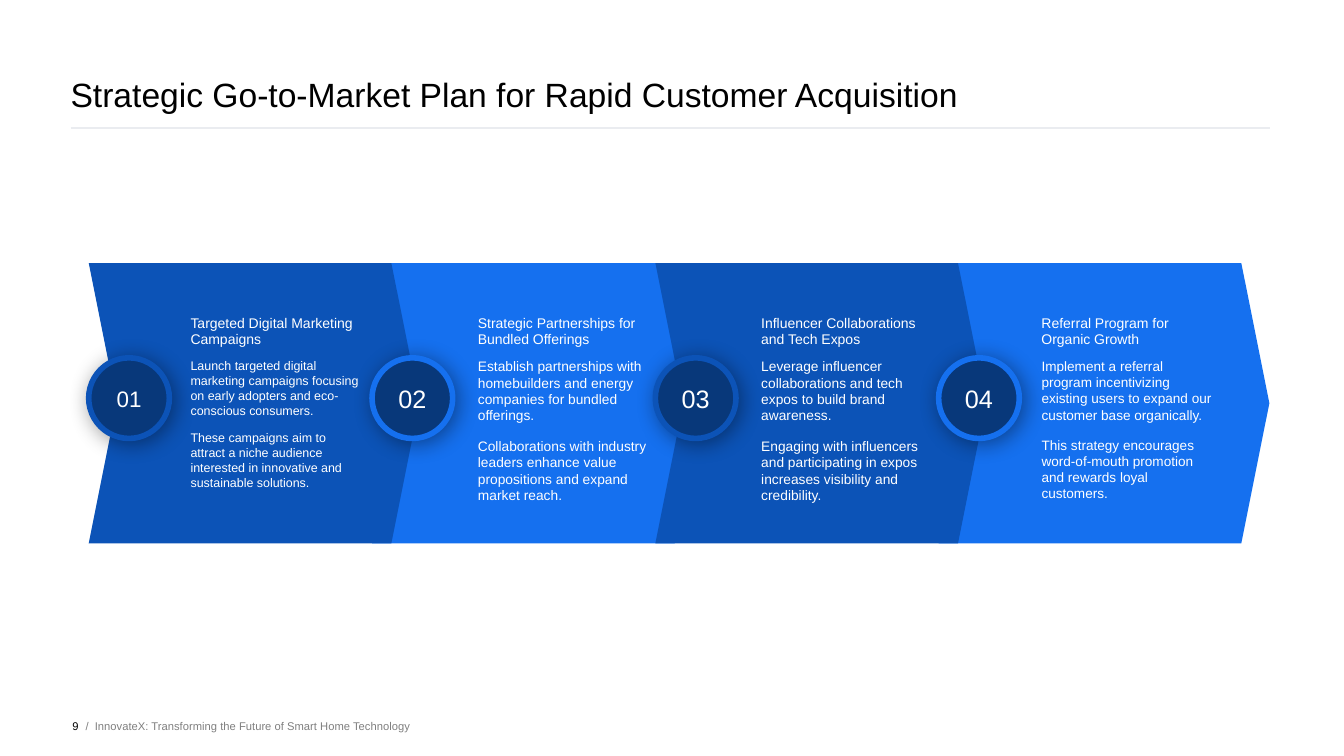
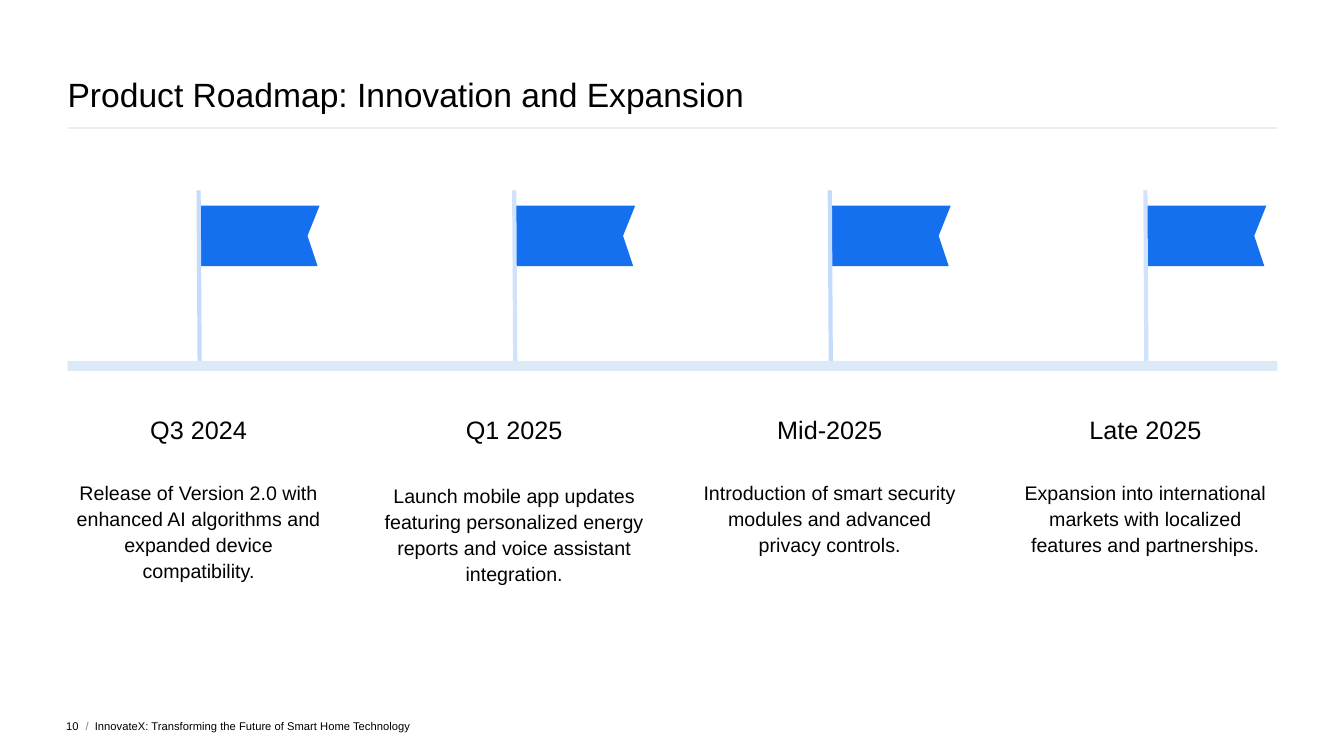
from lxml.etree import SubElement
from pptx import Presentation
from pptx.dml.color import RGBColor
from pptx.enum.shapes import MSO_CONNECTOR, MSO_SHAPE
from pptx.enum.text import MSO_ANCHOR, MSO_AUTO_SIZE, PP_ALIGN
from pptx.oxml.ns import qn
from pptx.util import Inches, Pt

FONT = "Arial"
COLORS = {
    "black": "000000", "white": "FFFFFF", "gray": "808080", "rule": "EAECF0",
    "blue": "1570EF", "deep": "0C53B7", "navy": "08387A",
    "pole": "C5DBFB", "pale_pole": "D0E2FC", "ground": "DCEAF7",
}
FOOTER = "InnovateX: Transforming the Future of Smart Home Technology"

# Heading, text left, text size, number size, paragraphs
STEPS = [
    ("Targeted Digital Marketing Campaigns", 1.89, 8.9, 16, [
        "Launch targeted digital marketing campaigns focusing on early adopters "
        "and eco-conscious consumers.",
        "These campaigns aim to attract a niche audience interested in innovative "
        "and sustainable solutions."]),
    ("Strategic Partnerships for Bundled Offerings", 4.74, 9.8, 18, [
        "Establish partnerships with homebuilders and energy companies for "
        "bundled offerings.",
        "Collaborations with industry leaders enhance value propositions and "
        "expand market reach."]),
    ("Influencer Collaborations and Tech Expos", 7.55, 9.8, 18, [
        "Leverage influencer collaborations and tech expos to build brand awareness.",
        "Engaging with influencers and participating in expos increases visibility "
        "and credibility."]),
    ("Referral Program for Organic Growth", 10.33, 9.7, 18, [
        "Implement a referral program incentivizing existing users to expand our "
        "customer base organically.",
        "This strategy encourages word-of-mouth promotion and rewards loyal "
        "customers."]),
]

# Date, description top, description
MILESTONES = [
    ("Q3 2024", 4.75, "Release of Version 2.0 with enhanced AI algorithms and "
                      "expanded device compatibility."),
    ("Q1 2025", 4.78, "Launch mobile app updates featuring personalized energy "
                      "reports and voice assistant integration."),
    ("Mid-2025", 4.75, "Introduction of smart security modules and advanced "
                       "privacy controls."),
    ("Late 2025", 4.75, "Expansion into international markets with localized "
                        "features and partnerships."),
]


def rgb(name):
    return RGBColor.from_string(COLORS[name])


class Deck:
    """Holds the shared style and the current slide."""

    def __init__(self):
        self.file = Presentation()
        self.file.slide_width = Inches(13.33)
        self.file.slide_height = Inches(7.5)
        self.page = None

    def add_page(self, title, number, left, width, footer_color):
        self.page = self.file.slides.add_slide(self.file.slide_layouts[5])
        # Title and rule
        box = self.page.shapes.title
        box.left, box.top = Inches(left), Inches(0)
        box.width, box.height = Inches(width), Inches(1.13)
        self.fill_text(box, [title], 24, anchor=MSO_ANCHOR.BOTTOM)
        self.line(left, 1.27, left + width, 1.27, "rule", 2)
        # Footer
        middle = MSO_ANCHOR.MIDDLE
        self.text(0.47, 6.9, 0.31, 0.6, [str(number)], 8,
                  align=PP_ALIGN.RIGHT, anchor=middle)
        self.text(0.85, 6.9, 0.09, 0.6, ["/"], 8, "gray", anchor=middle)
        self.text(0.94, 6.9, 8.61, 0.6, [FOOTER], 8, footer_color, anchor=middle)

    def fill_text(self, box, texts, size, color="black", align=PP_ALIGN.LEFT,
                  anchor=MSO_ANCHOR.TOP, spacing=None, after=0):
        frame = box.text_frame
        frame.word_wrap = True
        frame.auto_size = MSO_AUTO_SIZE.NONE
        frame.vertical_anchor = anchor
        frame.margin_left = frame.margin_right = Inches(0)
        frame.margin_top = frame.margin_bottom = Inches(0)
        for index, text in enumerate(texts):
            para = frame.add_paragraph() if index else frame.paragraphs[0]
            para.alignment = align
            para.space_before, para.space_after = Pt(0), Pt(after)
            if spacing:
                para.line_spacing = spacing
            span = para.add_run()
            span.text = text
            span.font.name, span.font.size = FONT, Pt(size)
            span.font.color.rgb = rgb(color)

    def text(self, left, top, width, height, texts, size, color="black", **style):
        box = self.page.shapes.add_textbox(
            Inches(left), Inches(top), Inches(width), Inches(height))
        self.fill_text(box, texts, size, color, **style)

    def paint(self, shape, fill):
        shape.fill.solid()
        shape.fill.fore_color.rgb = rgb(fill)
        shape.line.fill.background()
        shape.shadow.inherit = False

    def shape(self, kind, left, top, width, height, fill):
        shape = self.page.shapes.add_shape(
            kind, Inches(left), Inches(top), Inches(width), Inches(height))
        self.paint(shape, fill)
        return shape

    def line(self, x1, y1, x2, y2, color, width):
        line = self.page.shapes.add_connector(
            MSO_CONNECTOR.STRAIGHT, Inches(x1), Inches(y1), Inches(x2), Inches(y2))
        line.line.color.rgb = rgb(color)
        line.line.width = Pt(width)
        SubElement(line._element.spPr, qn("a:effectLst"))

    def chevron(self, left, fill):
        shape = self.shape(MSO_SHAPE.CHEVRON, left, 2.61, 3.28, 2.78, fill)
        shape.adjustments[0] = 0.1

    def badge(self, left, number, size, ring):
        badge = self.shape(MSO_SHAPE.OVAL, left, 3.55, 0.8, 0.8, "navy")
        badge.line.color.rgb = rgb(ring)
        badge.line.width = Pt(4)
        self.fill_text(badge, [number], size, "white", PP_ALIGN.CENTER,
                       MSO_ANCHOR.MIDDLE)
        # Soft shadow to the lower right
        effects = badge._element.spPr.find(qn("a:effectLst"))
        shadow = SubElement(effects, qn("a:outerShdw"), blurRad=str(Pt(15.8)),
                            dist=str(Pt(3)), dir="2700000", rotWithShape="0")
        black = SubElement(shadow, qn("a:srgbClr"), val=COLORS["black"])
        SubElement(black, qn("a:alpha"), val="40000")

    def flag(self, left, top, pole):
        outline = [(1.2, 0), (1.08, 0.3), (1.18, 0.6), (0, 0.6)]
        builder = self.page.shapes.build_freeform(Inches(left), Inches(top))
        builder.add_line_segments(
            [(Inches(left + x), Inches(top + y)) for x, y in outline])
        self.paint(builder.convert_to_shape(), "blue")
        self.line(left, top - 0.15, left + 0.01, 3.58, pole, 3)


def build_plan(deck):
    deck.add_page("Strategic Go-to-Market Plan for Rapid Customer Acquisition",
                  9, 0.7, 11.9, "gray")
    lefts = [0.88 + 2.81 * index for index in range(len(STEPS))]
    fills = ["deep", "blue"] * 2
    # Band of chevrons, the darker ones in front
    for index in (3, 1, 0, 2):
        deck.chevron(lefts[index], fills[index])
    # Numbered steps
    for index, (heading, left, size, number_size, texts) in enumerate(STEPS):
        deck.badge(lefts[index], f"{index + 1:02}", number_size, fills[index])
        deck.text(left, 3, 1.7, 0.45, [heading], 10, "white",
                  anchor=MSO_ANCHOR.BOTTOM)
        deck.text(left, 3.55, 1.69, 1.45, texts, size, "white", after=size)


def build_roadmap(deck):
    deck.add_page("Product Roadmap: Innovation and Expansion", 10, 0.67, 12, "black")
    # Flags, dates and descriptions
    for index, (date, top, description) in enumerate(MILESTONES):
        left = 0.67 + 3.13 * index
        deck.flag(left + 1.3, 2.04, ("pole", "pale_pole")[index % 2])
        deck.text(left, 4.14, 2.6, 0.5, [date], 18,
                  align=PP_ALIGN.CENTER, spacing=0.9)
        deck.text(left, top, 2.6, 1.2, [description], 14,
                  align=PP_ALIGN.CENTER, spacing=1.1)
    # Ground line
    deck.shape(MSO_SHAPE.RECTANGLE, 0.67, 3.58, 12, 0.1, "ground")


def main():
    deck = Deck()
    build_plan(deck)
    build_roadmap(deck)
    deck.file.save("out.pptx")


if __name__ == "__main__":
    main()
